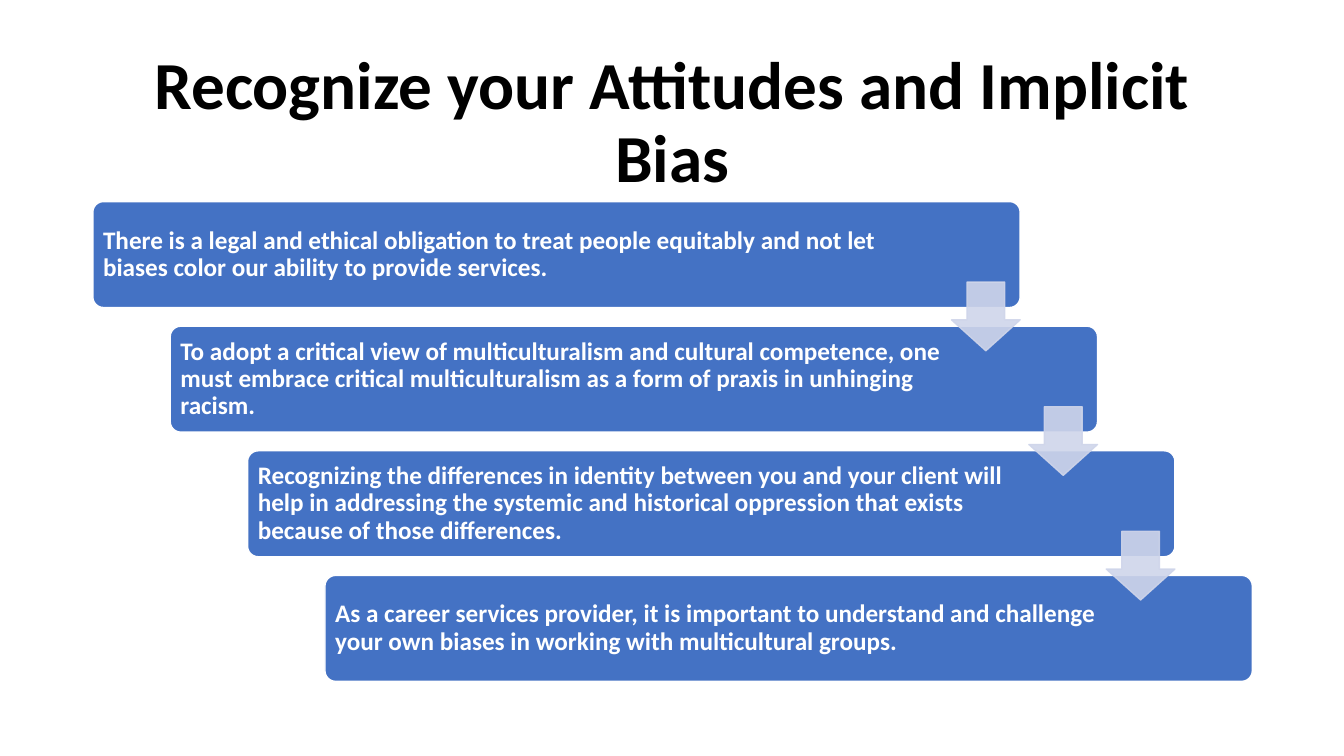
import pptx
import pptx.dml.color
import pptx.enum.shapes
import pptx.enum.text
import pptx.oxml
import pptx.oxml.ns
import pptx.util
from pptx.util import Cm

SHAPES = pptx.enum.shapes.MSO_SHAPE
ALIGN = pptx.enum.text.PP_ALIGN


def paint(color_format, hex_color, opacity=100):
    """Set a solid colour, with its opacity in percent."""
    color_format.rgb = pptx.dml.color.RGBColor.from_string(hex_color)
    if opacity < 100:
        solid = color_format._xFill
        alpha = pptx.oxml.parse_xml(
            f'<a:alpha {pptx.oxml.ns.nsdecls("a")} val="{opacity * 1000}"/>')
        solid[0].append(alpha)


def write(frame, text, size, hex_color, align):
    frame.word_wrap = True
    frame.vertical_anchor = pptx.enum.text.MSO_ANCHOR.MIDDLE
    paragraph = frame.paragraphs[0]
    paragraph.alignment = align
    paragraph.line_spacing = 0.9
    run = paragraph.add_run()
    run.text = text
    run.font.name = "Calibri"
    run.font.size = pptx.util.Pt(size)
    run.font.bold = True
    paint(run.font.color, hex_color)


deck = pptx.Presentation()
deck.slide_width, deck.slide_height = Cm(33.87), Cm(19.05)
slide = deck.slides.add_slide(deck.slide_layouts[6])

title = slide.shapes.add_textbox(Cm(2.34), Cm(1.55), Cm(29.21), Cm(3.15))
write(title.text_frame, "Recognize your Attitudes and Implicit Bias",
      48, "000000", ALIGN.CENTER)

# Each step: its text and the room kept free on its right, in cm
steps = [
    ("There is a legal and ethical obligation to treat people equitably and "
     "not let biases color our ability to provide services.", 3.2),
    ("To adopt a critical view of multiculturalism and cultural competence, "
     "one must embrace critical multiculturalism as a form of praxis in "
     "unhinging racism.", 3.94),
    ("Recognizing the differences in identity between you and your client "
     "will help in addressing the systemic and historical oppression that "
     "exists because of those differences.", 3.94),
    ("As a career services provider, it is important to understand and "
     "challenge your own biases in working with multicultural groups.", 3.94),
]
left, top = 2.34, 5.08
step_right, step_down = 1.95, 3.14
bar_width, bar_height = 23.37, 2.67
arrow_size, arrow_drop = 1.73, 2.03

for i, (text, free_right) in enumerate(steps):
    bar = slide.shapes.add_shape(
        SHAPES.ROUNDED_RECTANGLE, Cm(left + i * step_right),
        Cm(top + i * step_down), Cm(bar_width), Cm(bar_height))
    bar.shadow.inherit = False
    bar.adjustments[0] = 0.1
    bar.fill.solid()
    paint(bar.fill.fore_color, "4472C4")
    paint(bar.line.color, "FFFFFF")
    bar.line.width = pptx.util.Pt(1)
    bar.text_frame.margin_left = Cm(0.18)
    bar.text_frame.margin_right = Cm(free_right - 0.08)
    write(bar.text_frame, text, 18, "FFFFFF", ALIGN.LEFT)

for i in range(len(steps) - 1):
    arrow = slide.shapes.add_shape(
        SHAPES.DOWN_ARROW, Cm(left + bar_width - arrow_size + i * step_right),
        Cm(top + arrow_drop + i * step_down), Cm(arrow_size), Cm(arrow_size))
    arrow.shadow.inherit = False
    arrow.adjustments[0], arrow.adjustments[1] = 0.55, 0.45
    arrow.fill.solid()
    paint(arrow.fill.fore_color, "CFD5EA", 90)
    paint(arrow.line.color, "CFD5EA", 90)
    arrow.line.width = pptx.util.Pt(1)

deck.save("out.pptx")
